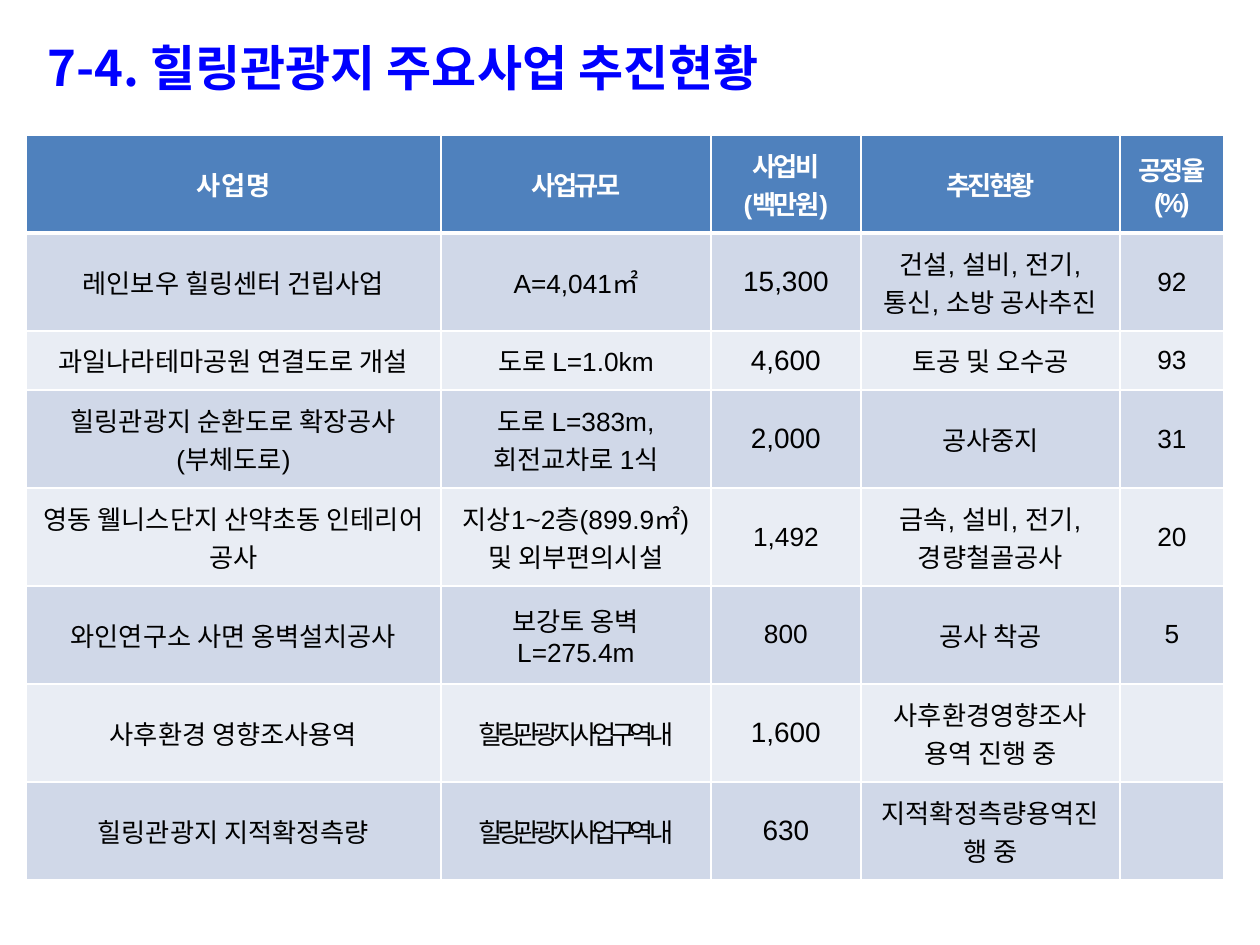
from dataclasses import dataclass

from lxml import etree
from pptx import Presentation
from pptx.dml.color import RGBColor
from pptx.enum.text import MSO_ANCHOR, MSO_AUTO_SIZE, PP_ALIGN
from pptx.oxml.ns import qn
from pptx.util import Emu, Pt

LEFT, CENTER = PP_ALIGN.LEFT, PP_ALIGN.CENTER
TOP, MIDDLE = MSO_ANCHOR.TOP, MSO_ANCHOR.MIDDLE
NO_AUTOFIT = MSO_AUTO_SIZE.NONE
TITLE_ONLY = 5
PX_PER_INCH = 126


@dataclass(frozen=True)
class Theme:
    """Colours, fonts and type sizes of the slide."""
    title: str = "0000FF"
    header: str = "4F81BD"
    bands: tuple = ("D0D8E8", "E9EDF4")
    white: str = "FFFFFF"
    ink: str = "000000"
    latin: str = "Arial"
    korean: str = "Noto Sans CJK KR"
    title_size: int = 28
    text_size: int = 15
    cost_size: int = 16
    header_spacing: float = -1.5
    tight_spacing: float = -3
    rule: int = 1
    header_rule: int = 3


THEME = Theme()
TITLE = "7-4. 힐링관광지 주요사업 추진현황"
COLUMN_WIDTHS = (415, 270, 150, 259, 104)
ROW_HEIGHTS = (98, 98, 59, 98, 98, 98, 98, 98)
COST_COLUMN = 2
SMALL_COSTS = ("1,492", "800")
SITE_WIDE = "힐링관광지 사업구역 내"
HEADINGS = ("사 업 명", "사업규모", "사업비\n(백만원)", "추진현황", "공정율\n(%)")
PROJECTS = (
    ("레인보우 힐링센터 건립사업", "A=4,041㎡", "15,300",
     "건설, 설비, 전기, 통신, 소방 공사추진", "92"),
    ("과일나라테마공원 연결도로 개설", "도로 L=1.0km", "4,600", "토공 및 오수공", "93"),
    ("힐링관광지 순환도로 확장공사\n(부체도로)", "도로 L=383m,\n회전교차로 1식", "2,000",
     "공사중지", "31"),
    ("영동 웰니스단지 산약초동 인테리어 공사", "지상1~2층(899.9㎡) 및 외부편의시설",
     "1,492", "금속, 설비, 전기, 경량철골공사", "20"),
    ("와인연구소 사면 옹벽설치공사", "보강토 옹벽 L=275.4m", "800", "공사 착공", "5"),
    ("사후환경 영향조사용역", SITE_WIDE, "1,600", "사후환경영향조사 용역 진행 중", ""),
    ("힐링관광지 지적확정측량", SITE_WIDE, "630", "지적확정측량용역진행 중", ""),
)


def px(length):
    """Turn whole pixels into EMU."""
    return Emu(round(length * 914400 / PX_PER_INCH))


def write_text(frame, text, *, size, color, font=THEME.latin, bold=False,
               spacing=0, align=CENTER, line_spacing=None):
    """Write one formatted paragraph for each line of the text."""
    for index, line in enumerate(text.split("\n")):
        paragraph = frame.add_paragraph() if index else frame.paragraphs[0]
        paragraph.alignment = align
        if line_spacing:
            paragraph.line_spacing = line_spacing
        run = paragraph.add_run()
        run.text = line
        run.font.size = Pt(size)
        run.font.bold = bold
        run.font.color.rgb = RGBColor.from_string(color)
        run.font.name = font
        properties = run.font._element
        properties.set("spc", str(round(spacing * 100)))
        etree.SubElement(properties, qn("a:ea"), typeface=THEME.korean)


def add_title(slide):
    """Place the heading in the title placeholder."""
    heading = slide.shapes.title
    heading.left, heading.top, heading.width, heading.height = map(px, (1, 2, 1250, 102))
    frame = heading.text_frame
    frame.auto_size = NO_AUTOFIT
    frame.word_wrap = True
    frame.vertical_anchor = TOP
    frame.margin_left = px(47)
    write_text(frame, TITLE, size=THEME.title_size, color=THEME.title,
               font=THEME.korean, bold=True, align=LEFT, line_spacing=1.5)


def set_borders(cell, top, bottom):
    """Draw white rules on the four sides of a cell."""
    properties = cell._tc.get_or_add_tcPr()
    widths = {"lnL": THEME.rule, "lnR": THEME.rule, "lnT": top, "lnB": bottom}
    for side, width in widths.items():
        line = etree.SubElement(properties, qn(f"a:{side}"), w=str(Pt(width)))
        fill = etree.SubElement(line, qn("a:solidFill"))
        etree.SubElement(fill, qn("a:srgbClr"), val=THEME.white)


def format_cell(cell, text, fill, top=THEME.rule, bottom=THEME.rule, **text_format):
    """Give a cell its borders, fill and text."""
    set_borders(cell, top, bottom)
    cell.fill.solid()
    cell.fill.fore_color.rgb = RGBColor.from_string(fill)
    cell.vertical_anchor = MIDDLE
    if text:
        write_text(cell.text_frame, text, **text_format)


def add_project_table(slide):
    """Build the table of projects with banded rows."""
    table = slide.shapes.add_table(
        len(ROW_HEIGHTS), len(COLUMN_WIDTHS), px(26), px(135),
        px(sum(COLUMN_WIDTHS)), px(sum(ROW_HEIGHTS))).table
    for column, width in zip(table.columns, COLUMN_WIDTHS):
        column.width = px(width)
    for row, height in zip(table.rows, ROW_HEIGHTS):
        row.height = px(height)
    for column, heading in enumerate(HEADINGS):
        format_cell(table.cell(0, column), heading, THEME.header,
                    bottom=THEME.header_rule, size=THEME.text_size,
                    color=THEME.white, bold=True, spacing=THEME.header_spacing)
    for row, project in enumerate(PROJECTS, start=1):
        for column, value in enumerate(project):
            large = column == COST_COLUMN and value not in SMALL_COSTS
            format_cell(table.cell(row, column), value, THEME.bands[(row - 1) % 2],
                        top=THEME.header_rule if row == 1 else THEME.rule,
                        size=THEME.cost_size if large else THEME.text_size,
                        color=THEME.ink,
                        spacing=THEME.tight_spacing if value == SITE_WIDE else 0)


def main():
    """Build and save the project status slide."""
    deck = Presentation()
    deck.slide_width, deck.slide_height = px(1260), px(945)
    slide = deck.slides.add_slide(deck.slide_layouts[TITLE_ONLY])
    add_title(slide)
    add_project_table(slide)
    deck.save("out.pptx")


if __name__ == "__main__":
    main()
